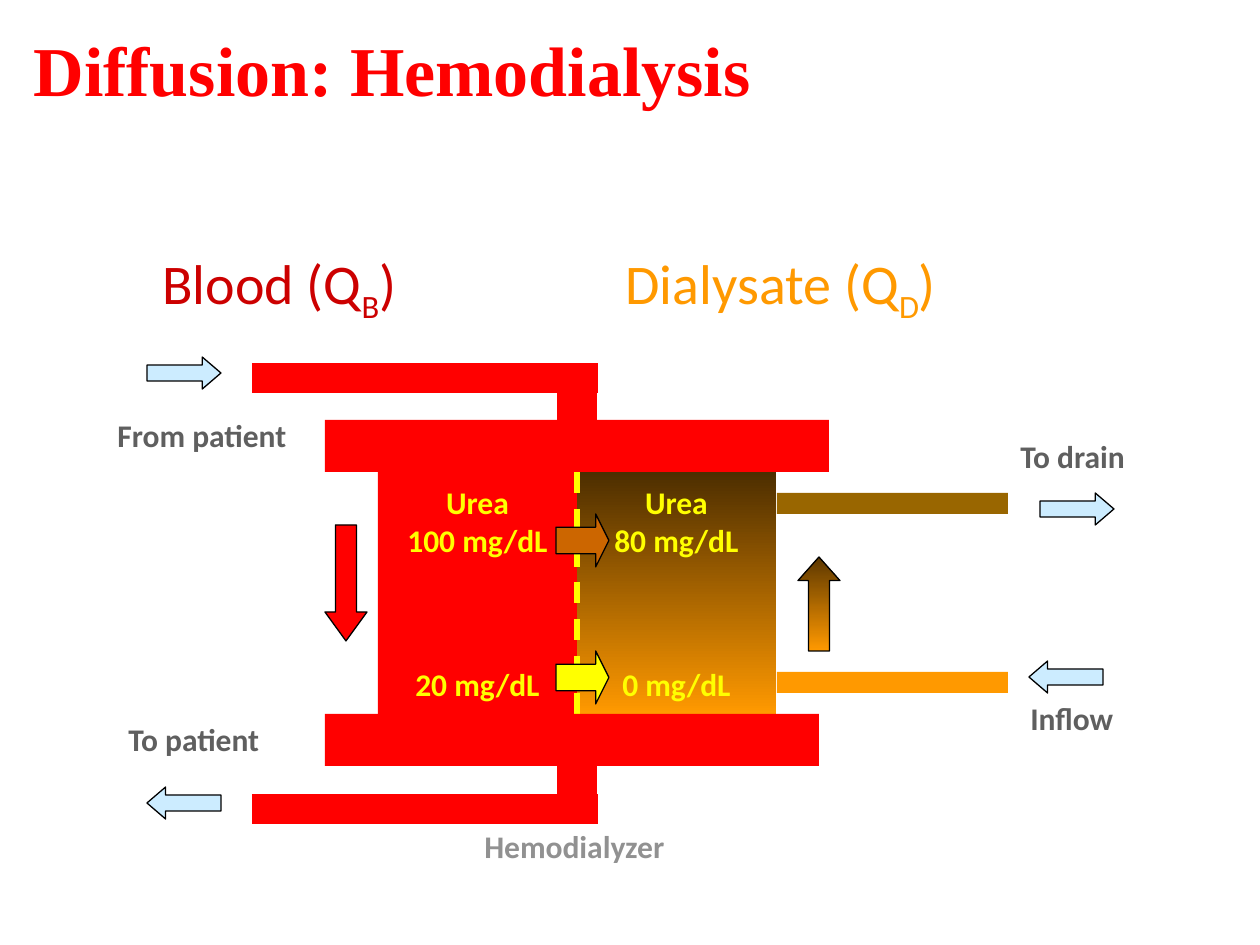
"""Build the hemodialysis diffusion slide."""
from lxml import etree
from pptx import Presentation
from pptx.dml.color import RGBColor
from pptx.enum.dml import MSO_LINE
from pptx.enum.shapes import MSO_CONNECTOR, MSO_SHAPE
from pptx.enum.text import MSO_ANCHOR, PP_ALIGN
from pptx.oxml.ns import qn
from pptx.util import Emu, Pt

PX = 914400 // 126
RECT = MSO_SHAPE.RECTANGLE
RIGHT, LEFT = MSO_SHAPE.RIGHT_ARROW, MSO_SHAPE.LEFT_ARROW
UP, DOWN = MSO_SHAPE.UP_ARROW, MSO_SHAPE.DOWN_ARROW
STRAIGHT, DASH = MSO_CONNECTOR.STRAIGHT, MSO_LINE.DASH
CENTER, MIDDLE = PP_ALIGN.CENTER, MSO_ANCHOR.MIDDLE

RED, YELLOW, ORANGE, GREY, ICE = "FF0000", "FFFF00", "FF9900", "5F5F5F", "CCECFF"
TITLE = "Diffusion: Hemodialysis"
HEADING_TABS = (87, 550)
HEADINGS = [("\tBlood (Q", "B", "CC0000"), ("\tDialysate (Q", "D", ORANGE)]
CHAMBERS = [
    (378, RED, ["Urea", "100 mg/dL", "20 mg/dL"]),
    (577, ("4D2E00", ORANGE), ["Urea", "80 mg/dL", "0 mg/dL"]),
]
BARS = [
    (325, 420, 504, 52, RED),
    (325, 714, 494, 52, RED),
    (777, 672, 231, 21, ORANGE),
    (777, 493, 231, 21, "996600"),
]
PIPES = [
    ((577, 420), (577, 388), 23),
    ((577, 766), (577, 798), 23),
    ((252, 378), (598, 378), 17.5),
    ((252, 809), (598, 809), 17.5),
]
FLOWS = [(LEFT, 1029, 661), (RIGHT, 1040, 493), (RIGHT, 147, 357), (LEFT, 147, 787)]
ARROWS = [(kind, x, y, 74, 32, 0.583, ICE) for kind, x, y in FLOWS] + [
    (DOWN, 325, 525, 42, 116, 0.688, RED),
    (UP, 798, 557, 42, 94, 0.562, ("5C3700", ORANGE)),
    (RIGHT, 556, 514, 53, 53, 0.25, "CC6600"),
    (RIGHT, 556, 651, 53, 53, 0.25, YELLOW),
]
LABELS = [
    ("From patient", 105, 410, 210, GREY, 0),
    ("To patient", 116, 714, 189, GREY, 0),
    ("To drain", 1008, 431, 189, GREY, 0),
    ("Inflow", 1018, 693, 189, GREY, 0),
    ("Hemodialyzer", 472, 821, 252, "919191", 0.3),
]


def rgb(color):
    """Return the colour of a hex string."""
    return RGBColor.from_string(color)


def px(*lengths):
    """Scale pixel lengths to EMU."""
    return [Emu(round(n * PX)) for n in lengths]


def style(p, size, color, name="Calibri", bold=True):
    """Set the font of a paragraph."""
    p.font.size, p.font.name, p.font.bold = Pt(size), name, bold
    p.font.color.rgb = rgb(color)


def add_shape(s, kind, box, fill, line=None):
    """Add a preset shape with a solid or a top-to-bottom gradient fill."""
    sp = s.shapes.add_shape(kind, *px(*box))
    sp.shadow.inherit = False
    if isinstance(fill, tuple):
        sp.fill.gradient()
        sp.fill.gradient_angle = 270
        for stop, color, position in zip(sp.fill.gradient_stops, fill, (0, 1)):
            stop.color.rgb, stop.position = rgb(color), position
    else:
        sp.fill.solid()
        sp.fill.fore_color.rgb = rgb(fill)
    if line:
        sp.line.color.rgb, sp.line.width = rgb(line), Pt(0.75)
    else:
        sp.line.fill.background()
    return sp


def add_line(s, start, end, color, width):
    """Add a straight connector without shadow."""
    c = s.shapes.add_connector(STRAIGHT, *px(*start, *end))
    c.line.color.rgb, c.line.width = rgb(color), Pt(width)
    etree.SubElement(c._element.spPr, qn("a:effectLst"))
    return c


def add_text(s, box):
    """Add a wrapping text box and return its shape and first paragraph."""
    sp = s.shapes.add_textbox(*px(*box))
    sp.text_frame.word_wrap = True
    return sp, sp.text_frame.paragraphs[0]


def add_headings(s):
    """Write both stream names in one line, placed by tab stops."""
    p = add_text(s, (63, 242, 1134, 602))[1]
    style(p, 32, ORANGE, bold=False)
    tabs = etree.Element(qn("a:tabLst"))
    for pos in px(*HEADING_TABS):
        etree.SubElement(tabs, qn("a:tab"), pos=str(pos), algn="l")
    p._p.get_or_add_pPr().insert(0, tabs)
    for name, index, color in HEADINGS:
        for text in (name, index, ")"):
            r = p.add_run()
            r.text = text
            r.font.color.rgb = rgb(color)
            if text == index:
                r.font._element.set("baseline", "-25000")


def add_chamber(s, x, fill, lines):
    """Add one side of the dialyzer with its concentrations."""
    tf = add_shape(s, RECT, (x, 472, 199, 242), fill).text_frame
    tf.word_wrap, tf.vertical_anchor = False, MIDDLE
    tf.text = "\n".join(lines)
    for p in tf.paragraphs:
        p.alignment = CENTER
        style(p, 18, YELLOW)
    tf.paragraphs[-1].space_before = Pt(61)


def main():
    """Build and save the slide."""
    prs = Presentation()
    prs.slide_width, prs.slide_height = px(1260, 945)
    s = prs.slides.add_slide(prs.slide_layouts[5])
    title = s.shapes.title
    title.left, title.top, title.width, title.height = px(21, -10, 1134, 157)
    title.text_frame.text = TITLE
    title.text_frame.vertical_anchor = MIDDLE
    p = title.text_frame.paragraphs[0]
    p.alignment = PP_ALIGN.LEFT
    style(p, 40, RED, "Times New Roman")

    add_headings(s)
    for chamber in CHAMBERS:
        add_chamber(s, *chamber)
    membrane = add_line(s, (577, 472), (577, 714), YELLOW, 3)
    membrane.line.dash_style = DASH

    bars = [add_shape(s, RECT, box, fill) for *box, fill in BARS]
    pipes = [add_line(s, start, end, RED, width) for start, end, width in PIPES]
    pipes[0].begin_connect(bars[0], 0)

    for text, x, y, width, color, angle in LABELS:
        sp, p = add_text(s, (x, y, width, 50))
        sp.rotation = angle
        p.text = text
        style(p, 18, color)
    for kind, *box, head, fill in ARROWS:
        sp = add_shape(s, kind, box, fill, "000000")
        sp.adjustments[0], sp.adjustments[1] = 0.5, head
    prs.save("out.pptx")


if __name__ == "__main__":
    main()
